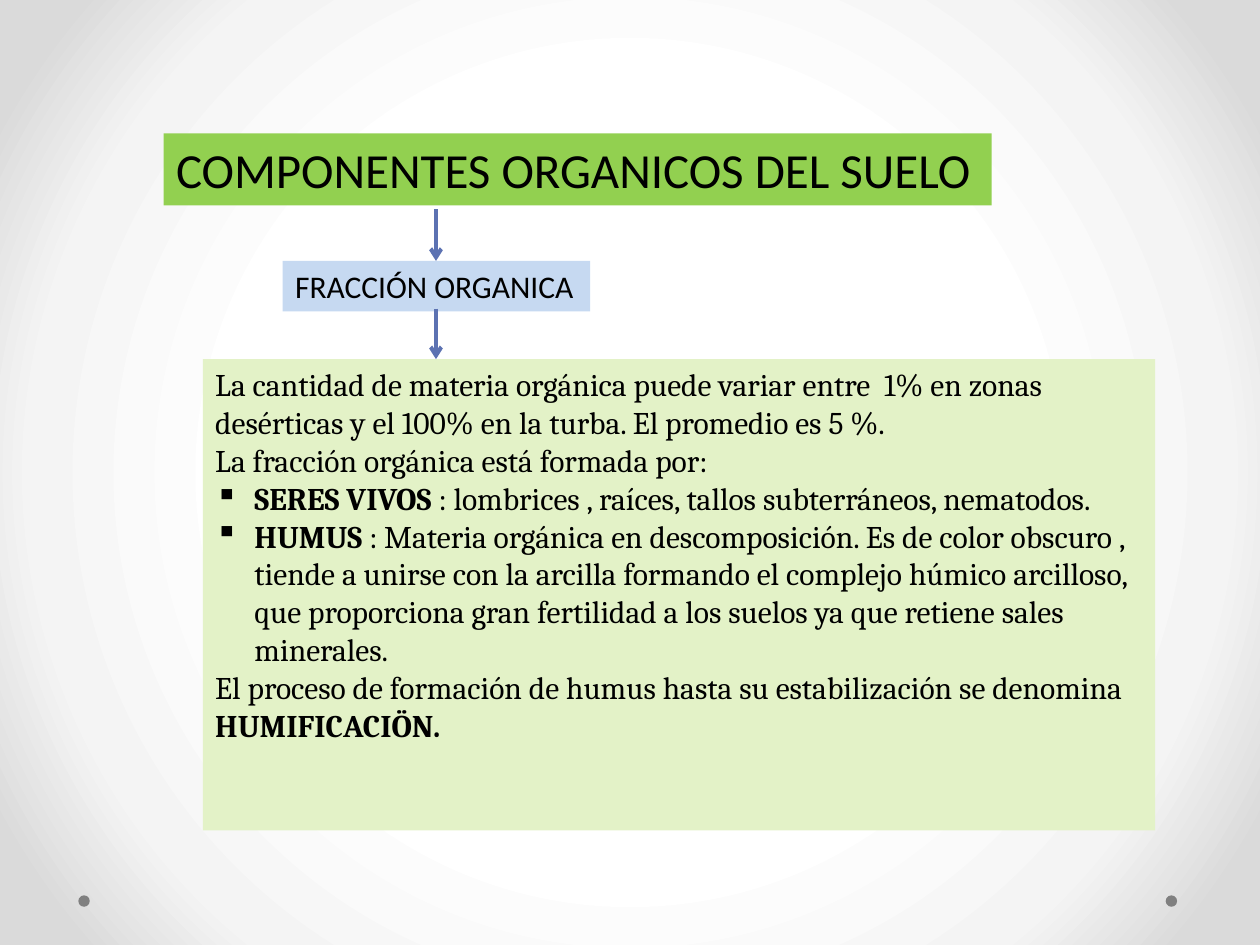
from lxml.etree import SubElement
from pptx import Presentation
from pptx.dml.color import RGBColor
from pptx.enum.shapes import MSO_CONNECTOR as CONN, MSO_SHAPE as SHAPE
from pptx.enum.text import MSO_ANCHOR as ANCHOR, PP_ALIGN as ALIGN
from pptx.oxml import parse_xml
from pptx.oxml.ns import nsdecls, qn
from pptx.util import Cm, Pt

BACKGROUND_STOPS = [(50, "FFFFFF"), (76, "F4F4F4"), (92, "DADADA")]
ARROW_X = 8.79
INDENT = Cm(0.79)

# Each paragraph: whether it has a bullet, then its (text, bold) runs
BODY = [
    (False, [("La cantidad de materia orgánica puede variar entre  1% en zonas "
              "desérticas y el 100% en la turba. El promedio es 5 %.", False)]),
    (False, [("La fracción orgánica está formada por:", False)]),
    (True, [("SERES VIVOS ", True),
            (": lombrices , raíces, tallos subterráneos, nematodos.", False)]),
    (True, [("HUMUS ", True),
            (": Materia orgánica en descomposición. Es de color obscuro , tiende "
             "a unirse con la arcilla formando el complejo húmico arcilloso, que "
             "proporciona gran fertilidad a los suelos ya que retiene sales "
             "minerales.", False)]),
    (False, [("El proceso de formación de humus hasta su estabilización se "
              "denomina ", False), ("HUMIFICACIÖN.", True)]),
]


def rgb(color):
    return RGBColor.from_string(color)


def set_background(s):
    """Fill the slide with a gradient that spreads in circles from the centre."""
    s.background.fill.gradient()
    stops = "".join(
        f'<a:gs pos="{pos * 1000}"><a:srgbClr val="{color}"/></a:gs>'
        for pos, color in BACKGROUND_STOPS)
    grad = parse_xml(
        f'<a:gradFill {nsdecls("a")} rotWithShape="1"><a:gsLst>{stops}</a:gsLst>'
        '<a:path path="circle"><a:fillToRect l="50000" t="50000" r="50000" '
        'b="50000"/></a:path></a:gradFill>')
    old = next(s.element.iter(qn("a:gradFill")))
    old.getparent().replace(old, grad)


def add_block(s, shape, left, top, width, height, color):
    sp = s.shapes.add_shape(shape, Cm(left), Cm(top), Cm(width), Cm(height))
    sp.shadow.inherit = False
    sp.fill.solid()
    sp.fill.fore_color.rgb = rgb(color)
    sp.line.fill.background()
    return sp


def add_bullet(p):
    pPr = p._p.get_or_add_pPr()
    pPr.set("marL", str(INDENT))
    pPr.set("indent", str(-INDENT))
    SubElement(pPr, qn("a:buChar"), char="▪")


def add_text_box(s, box, color, paragraphs, font, size):
    tf = add_block(s, SHAPE.RECTANGLE, *box, color).text_frame
    tf.word_wrap = True
    tf.vertical_anchor = ANCHOR.TOP
    for i, (bulleted, runs) in enumerate(paragraphs):
        p = tf.add_paragraph() if i else tf.paragraphs[0]
        p.alignment = ALIGN.LEFT
        if bulleted:
            add_bullet(p)
        for text, bold in runs:
            r = p.add_run()
            r.text = text
            r.font.name = font
            r.font.size = Pt(size)
            r.font.bold = bold
            r.font.color.rgb = rgb("000000")


def add_down_arrow(s, top, bottom):
    line = s.shapes.add_connector(
        CONN.STRAIGHT, Cm(ARROW_X), Cm(top), Cm(ARROW_X), Cm(bottom))
    line.line.color.rgb = rgb("5C72B2")
    line.line.width = Pt(2.25)
    SubElement(line.line._get_or_add_ln(), qn("a:tailEnd"), type="arrow")
    SubElement(line._element.spPr, qn("a:effectLst"))


def main():
    prs = Presentation()
    prs.slide_width, prs.slide_height = Cm(25.4), Cm(19.05)
    s = prs.slides.add_slide(prs.slide_layouts[6])
    set_background(s)
    for left in (23.5, 1.58):
        add_block(s, SHAPE.OVAL, left, 18.05, 0.23, 0.23, "808080")

    title = [(False, [("COMPONENTES ORGANICOS DEL SUELO", False)])]
    fraction = [(False, [("FRACCIÓN ORGANICA", False)])]
    add_text_box(s, (3.3, 2.69, 16.69, 1.45), "92D050", title, "Calibri", 28)
    add_text_box(s, (5.7, 5.26, 6.2, 1.02), "C6D9F1", fraction, "Calibri", 18)
    add_text_box(s, (4.09, 7.24, 19.2, 9.5), "E3F2C7", BODY, "Cambria", 18)

    add_down_arrow(s, 4.22, 5.26)
    add_down_arrow(s, 6.22, 7.24)
    prs.save("out.pptx")


if __name__ == "__main__":
    main()
